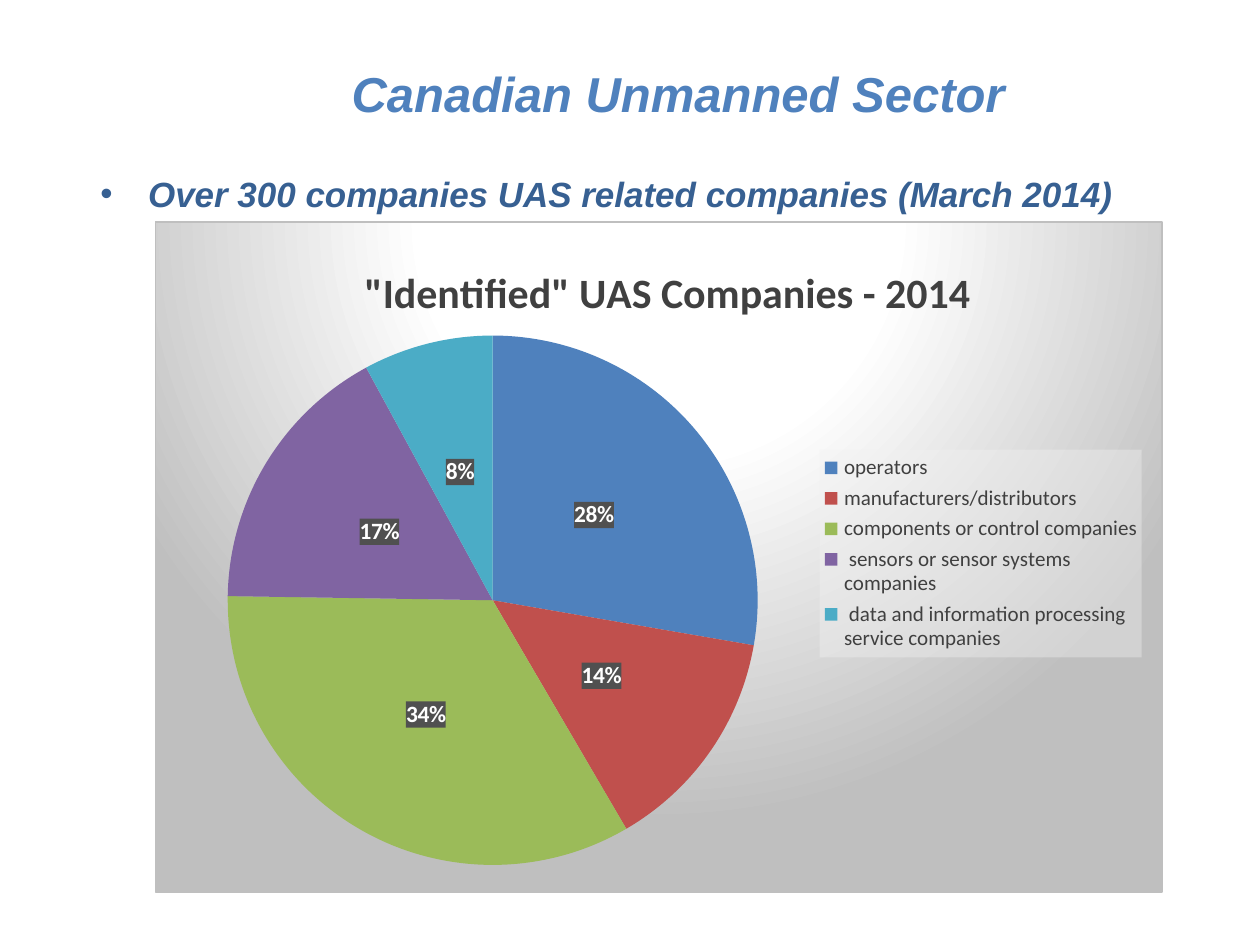
from lxml import etree
from pptx import Presentation
from pptx.chart.data import CategoryChartData
from pptx.dml.color import RGBColor
from pptx.enum.chart import XL_CHART_TYPE, XL_LABEL_POSITION, XL_LEGEND_POSITION
from pptx.enum.text import MSO_ANCHOR, PP_ALIGN
from pptx.oxml import parse_xml
from pptx.oxml.ns import nsdecls, qn
from pptx.util import Cm, Pt

BLUE = RGBColor(0x4F, 0x81, 0xBD)
DARK_BLUE = RGBColor(0x37, 0x60, 0x92)
WHITE = RGBColor(0xFF, 0xFF, 0xFF)
BLACK = RGBColor(0x00, 0x00, 0x00)
CHARCOAL = RGBColor(0x40, 0x40, 0x40)
LABEL_GREY = RGBColor(0x50, 0x50, 0x50)
PALE_GREY = RGBColor(0xF2, 0xF2, 0xF2)
SILVER = RGBColor(0xBF, 0xBF, 0xBF)
RED = RGBColor(0xC0, 0x50, 0x4D)
GREEN = RGBColor(0x9B, 0xBB, 0x59)
PURPLE = RGBColor(0x80, 0x64, 0xA2)
TEAL = RGBColor(0x4B, 0xAC, 0xC6)

SECTORS = [
    ("operators", 28, BLUE),
    ("manufacturers/distributors", 14, RED),
    ("components or control companies", 34, GREEN),
    (" sensors or sensor systems companies", 17, PURPLE),
    (" data and information processing service companies", 8, TEAL),
]


def style_font(font, name, size, color, bold=False, italic=False):
    font.name = name
    font.size = Pt(size)
    font.color.rgb = color
    font.bold = bold
    font.italic = italic


def add_title(page, text):
    title = page.shapes.title
    title.left, title.top, title.width, title.height = Cm(1.68), Cm(0.58), Cm(17.15), Cm(2.39)
    frame = title.text_frame
    frame.text = text
    frame.vertical_anchor = MSO_ANCHOR.MIDDLE
    frame.margin_top, frame.margin_bottom = Cm(0.13), Cm(0.86)
    paragraph = frame.paragraphs[0]
    paragraph.alignment = PP_ALIGN.CENTER
    style_font(paragraph.runs[0].font, "Arial", 21, BLUE, True, True)


def add_bullet(page, text):
    box = page.shapes.add_textbox(Cm(1.27), Cm(2.49), Cm(16.71), Cm(0.84))
    frame = box.text_frame
    frame.word_wrap = True
    frame.text = text
    paragraph = frame.paragraphs[0]
    properties = paragraph._p.get_or_add_pPr()
    properties.set("marL", str(Cm(0.72)))
    properties.set("indent", str(-Cm(0.72)))
    etree.SubElement(properties, qn("a:buFont")).set("typeface", "Arial")
    etree.SubElement(properties, qn("a:buChar")).set("char", "•")
    style_font(paragraph.runs[0].font, "Arial", 15, DARK_BLUE, True, True)


def solid_fill(color, opacity=100):
    return (f'<a:solidFill><a:srgbClr val="{color}">'
            f'<a:alpha val="{opacity * 1000}"/></a:srgbClr></a:solidFill>')


def chart_area_format():
    stops = "".join(f'<a:gs pos="{percent * 1000}"><a:srgbClr val="{color}"/></a:gs>'
                    for percent, color in [(0, WHITE), (39, WHITE), (100, SILVER)])
    return (f'<a:gradFill rotWithShape="1"><a:gsLst>{stops}</a:gsLst><a:path path="circle">'
            '<a:fillToRect l="50000" t="-80000" r="50000" b="180000"/></a:path></a:gradFill>'
            f'<a:ln w="{Pt(0.75)}">{solid_fill(SILVER)}</a:ln>')


def shape_format(content):
    return parse_xml(f'<c:spPr {nsdecls("c", "a")}>{content}</c:spPr>')


def place(element, index, inner=False, **fractions):
    for old in element.findall(qn("c:layout")):
        element.remove(old)
    layout = etree.Element(qn("c:layout"))
    manual = etree.SubElement(layout, qn("c:manualLayout"))
    settings = {"layoutTarget": "inner"} if inner else {}
    settings.update(xMode="edge", yMode="edge", **fractions)
    for name, value in settings.items():
        etree.SubElement(manual, qn(f"c:{name}")).set("val", str(value))
    element.insert(index, layout)


def add_chart_title(chart, text):
    frame = chart.chart_title.text_frame
    frame.text = text
    style_font(frame.paragraphs[0].runs[0].font, "Calibri", 18, CHARCOAL, True)
    place(chart.chart_title._element, 1, x=0.2, y=0.05)


def add_legend(chart):
    chart.has_legend = True
    legend = chart.legend
    legend.position = XL_LEGEND_POSITION.RIGHT
    legend.include_in_layout = False
    style_font(legend.font, "Calibri", 9, CHARCOAL)
    place(legend._element, 1, x=0.66, y=0.34, w=0.32, h=0.31)
    legend._element.find(qn("c:txPr")).addprevious(shape_format(solid_fill(PALE_GREY, 39)))


def add_percent_labels(plot):
    plot.has_data_labels = True
    labels = plot.data_labels
    labels.show_value = False
    labels.show_percentage = True
    labels.number_format = "0%"
    labels.number_format_is_linked = False
    labels.position = XL_LABEL_POSITION.CENTER
    style_font(labels.font, "Calibri", 10, WHITE, True)
    labels._element.find(qn("c:txPr")).addprevious(shape_format(solid_fill(LABEL_GREY)))


def add_sector_pie(page):
    names, values, colors = zip(*SECTORS)
    data = CategoryChartData()
    data.categories = names
    data.add_series("Series 1", values)
    chart = page.shapes.add_chart(
        XL_CHART_TYPE.PIE, Cm(2.34), Cm(3.34), Cm(15.24), Cm(10.16), data).chart
    style_font(chart.font, "Calibri", 10, BLACK)
    add_chart_title(chart, '"Identified" UAS Companies - 2014')
    add_legend(chart)
    plot = chart.plots[0]
    plot.vary_by_categories = True
    add_percent_labels(plot)
    for index, color in enumerate(colors):
        fill = plot.series[0].points[index].format.fill
        fill.solid()
        fill.fore_color.rgb = color
    chart_element = chart._chartSpace.find(qn("c:chart"))
    place(chart_element.find(qn("c:plotArea")), 0, True, x=0.07, y=0.17, w=0.53, h=0.79)
    chart_element.addnext(shape_format(chart_area_format()))


def main():
    deck = Presentation()
    deck.slide_width, deck.slide_height = Cm(19.05), Cm(14.29)
    page = deck.slides.add_slide(deck.slide_layouts[5])
    add_title(page, "Canadian Unmanned Sector")
    add_bullet(page, "Over 300 companies UAS related companies (March 2014)")
    add_sector_pie(page)
    deck.save("out.pptx")


if __name__ == "__main__":
    main()
